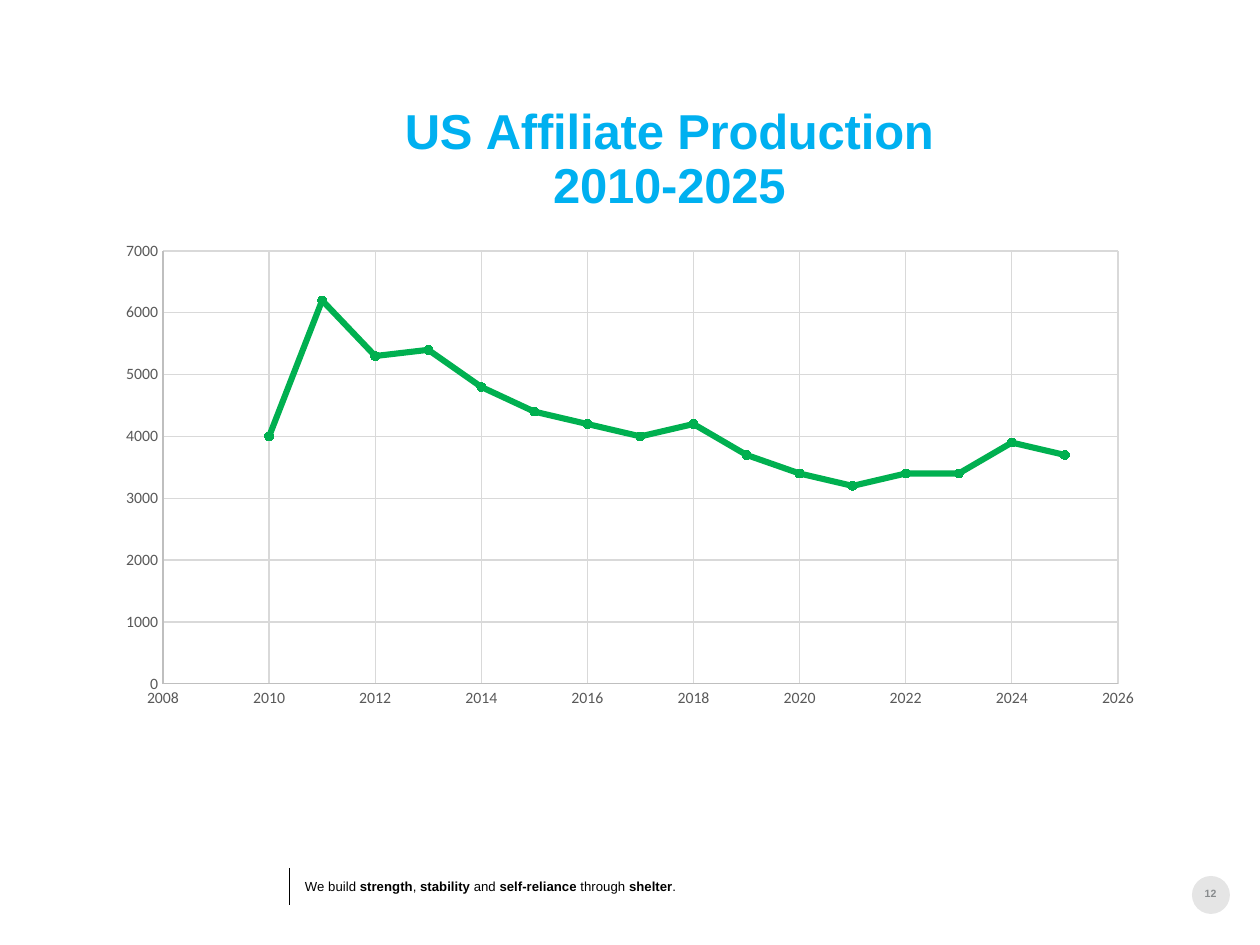
from lxml import etree
from pptx import Presentation, util as u
from pptx.chart.data import XyChartData
from pptx.dml.color import RGBColor
from pptx.enum import chart as charts, shapes, text
from pptx.oxml.ns import qn

EMU_PER_PX = 914400 / 126
CHART_WIDTH, CHART_HEIGHT = 1050, 630
GREEN = "00B050"
PRODUCTION = [4000, 6200, 5300, 5400, 4800, 4400, 4200, 4000,
              4200, 3700, 3400, 3200, 3400, 3400, 3900, 3700]
SLOGAN = [("We build ", False), ("strength", True), (", ", False),
          ("stability", True), (" and ", False), ("self-reliance", True),
          (" through ", False), ("shelter", True), (".", False)]


def px(*lengths):
    return [u.Emu(round(length * EMU_PER_PX)) for length in lengths]


def color(value):
    return RGBColor.from_string(value)


def style_font(font, size, value, bold=False, name="Arial"):
    font.name = name
    font.size = u.Pt(size)
    font.bold = bold
    font.color.rgb = color(value)


def style_line(line, value, width):
    line.color.rgb = color(value)
    line.width = u.Pt(width)


def add_text(slide, box, runs, size, value, align, spacing=1.0):
    text_frame = slide.shapes.add_textbox(*px(*box)).text_frame
    text_frame.word_wrap = True
    text_frame.margin_left = text_frame.margin_right = 0
    text_frame.margin_top = text_frame.margin_bottom = 0
    paragraph = text_frame.paragraphs[0]
    paragraph.alignment = align
    paragraph.line_spacing = spacing
    for words, bold in runs:
        run = paragraph.add_run()
        run.text = words
        style_font(run.font, size, value, bold)


def add_badge(slide, box):
    badge = slide.shapes.add_shape(shapes.MSO_SHAPE.OVAL, *px(*box))
    badge.shadow.inherit = False
    badge.fill.solid()
    badge.fill.fore_color.rgb = color("000000")
    badge.line.fill.background()
    tint = badge.fill._xPr.find(".//" + qn("a:srgbClr"))
    etree.SubElement(tint, qn("a:alpha")).set("val", "10000")


def add_rule(slide, ends):
    rule = slide.shapes.add_connector(shapes.MSO_CONNECTOR.STRAIGHT, *px(*ends))
    style_line(rule.line, "000000", 0.5)
    etree.SubElement(rule._element.spPr, qn("a:effectLst"))


def set_layout(element, index, **settings):
    layout = element.find(qn("c:layout"))
    if layout is None:
        layout = etree.Element(qn("c:layout"))
        element.insert(index, layout)
    manual = etree.SubElement(layout, qn("c:manualLayout"))
    for tag, value in settings.items():
        etree.SubElement(manual, qn("c:" + tag)).set("val", str(value))


def style_axis(axis, low, high, step):
    axis.minimum_scale = low
    axis.maximum_scale = high
    axis.major_unit = step
    axis.major_tick_mark = charts.XL_TICK_MARK.NONE
    axis.minor_tick_mark = charts.XL_TICK_MARK.NONE
    axis.has_major_gridlines = True
    style_line(axis.major_gridlines.format.line, "D9D9D9", 0.75)
    style_line(axis.format.line, "BFBFBF", 0.75)
    style_font(axis.tick_labels.font, 9, "595959", name="Calibri")
    axis.tick_labels.number_format = "General"
    axis.tick_labels.number_format_is_linked = False


def style_series(series):
    series.smooth = False
    style_line(series.format.line, GREEN, 3.5)
    series.marker.style = charts.XL_MARKER_STYLE.CIRCLE
    series.marker.size = 5
    series.marker.format.fill.solid()
    series.marker.format.fill.fore_color.rgb = color(GREEN)
    style_line(series.marker.format.line, GREEN, 0.75)


def add_title(chart, words):
    chart.has_title = True
    title = chart.chart_title
    title.text_frame.text = words
    for paragraph in title.text_frame.paragraphs:
        paragraph.alignment = text.PP_ALIGN.CENTER
        for run in paragraph.runs:
            style_font(run.font, 28, "00B0F0", True)
    title.include_in_layout = False
    set_layout(title._element, 1, xMode="edge", yMode="edge",
               x=296 / CHART_WIDTH, y=11 / CHART_HEIGHT)


def add_production_chart(slide, left, top):
    data = XyChartData()
    points = data.add_series("Series 1")
    for year, homes in enumerate(PRODUCTION, 2010):
        points.add_data_point(year, homes)
    chart = slide.shapes.add_chart(
        charts.XL_CHART_TYPE.XY_SCATTER_LINES,
        *px(left, top, CHART_WIDTH, CHART_HEIGHT), data).chart
    chart.has_legend = False
    style_font(chart.font, 10, "000000", name="Calibri")
    chart.plots[0].vary_by_categories = False
    add_title(chart, "US Affiliate Production\n2010-2025")
    style_axis(chart.category_axis, 2008, 2026, 2)
    style_axis(chart.value_axis, 0, 7000, 1000)
    style_series(chart.plots[0].series[0])
    plot_area = chart._chartSpace.find(".//" + qn("c:plotArea"))
    set_layout(plot_area, 0, layoutTarget="inner", xMode="edge", yMode="edge",
               x=58 / CHART_WIDTH, y=162 / CHART_HEIGHT,
               w=955 / CHART_WIDTH, h=433 / CHART_HEIGHT)


def main():
    presentation = Presentation()
    presentation.slide_width, presentation.slide_height = px(1260, 945)
    slide = presentation.slides.add_slide(presentation.slide_layouts[6])
    add_badge(slide, (1192, 876, 38, 38))
    add_text(slide, (1194, 887, 33, 14), [("12", True)], 6, "888B8D",
             text.PP_ALIGN.CENTER)
    add_rule(slide, (289, 868, 289, 905))
    add_text(slide, (305, 881, 476, 13), SLOGAN, 7.5, "000000",
             text.PP_ALIGN.LEFT, 0.8)
    add_production_chart(slide, 105, 89)
    presentation.save("out.pptx")


if __name__ == "__main__":
    main()
